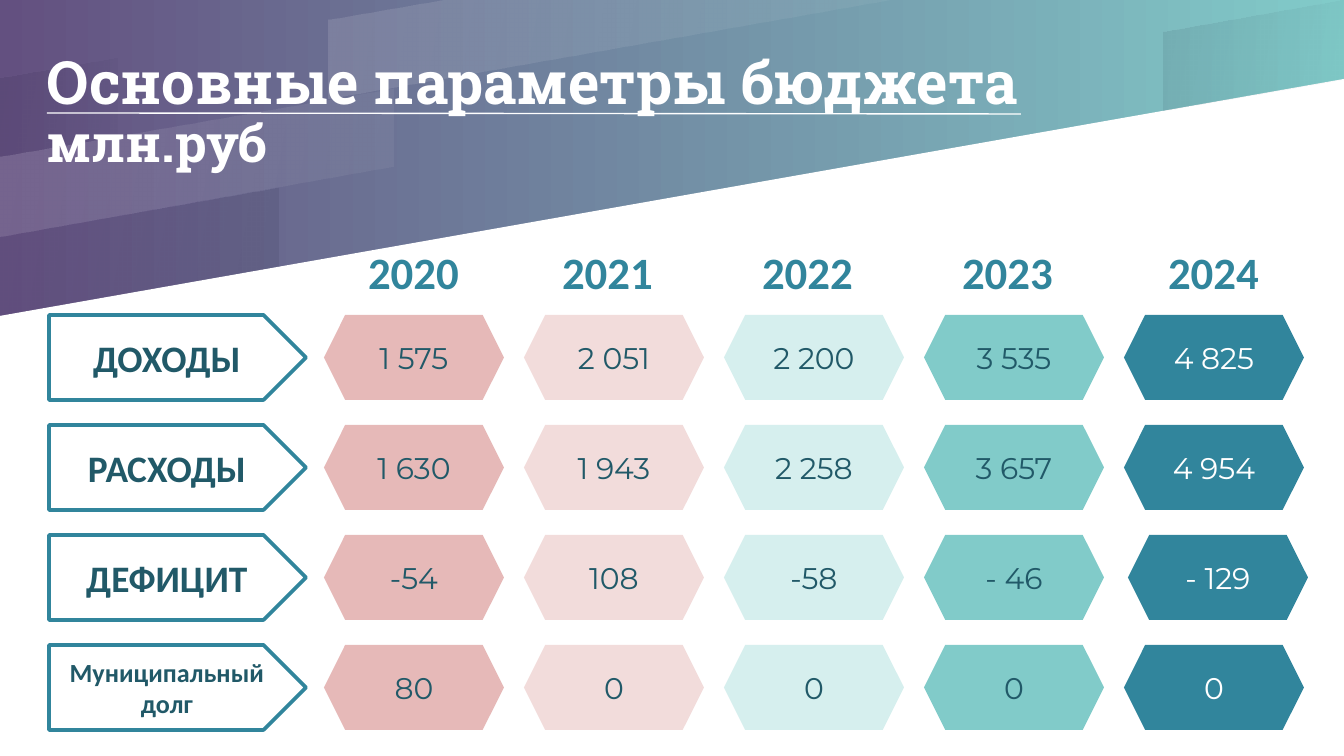
from dataclasses import dataclass

from lxml.etree import SubElement
from pptx import Presentation
from pptx.dml.color import RGBColor
from pptx.enum.shapes import MSO_CONNECTOR, MSO_SHAPE
from pptx.enum.text import MSO_ANCHOR, MSO_AUTO_SIZE, PP_ALIGN
from pptx.oxml.ns import qn
from pptx.util import Emu, Pt

PX = 914400 / 134.4

WHITE = RGBColor(0xFF, 0xFF, 0xFF)
NIGHT = RGBColor(0x00, 0x00, 0x1A)
PURPLE = RGBColor(0x63, 0x50, 0x80)
MINT = RGBColor(0x81, 0xCB, 0xC9)
PALE = RGBColor(0xD6, 0xEF, 0xEE)
ROSE = RGBColor(0xE6, 0xB9, 0xB8)
BLUSH = RGBColor(0xF2, 0xDC, 0xDB)
TEAL = RGBColor(0x31, 0x85, 0x9C)
DEEP = RGBColor(0x21, 0x59, 0x68)


@dataclass(frozen=True)
class Style:
    font: str
    size: int
    color: RGBColor
    bold: bool = True


@dataclass(frozen=True)
class Band:
    points: tuple[tuple[int, int], ...]
    color: RGBColor
    start: int
    end: int


@dataclass(frozen=True)
class Year:
    name: str
    left: int
    fill: RGBColor
    ink: RGBColor
    values: tuple[str, ...]


@dataclass(frozen=True)
class Row:
    name: str
    size: int


BANDS = (
    Band(((446, 0), (328, 20), (328, 99), (894, 0)), WHITE, 12, 5),
    Band(((0, 78), (0, 157), (117, 137), (117, 58)), NIGHT, 8, 2),
    Band(((0, 237), (0, 316), (278, 267), (278, 188)), NIGHT, 2, 8),
    Band(((1344, 0), (1164, 32), (1164, 110), (1344, 79)), NIGHT, 8, 2),
    Band(((0, 157), (0, 237), (394, 167), (394, 89)), WHITE, 12, 5),
)
PAPER = ((0, 756), (1344, 756), (1344, 79), (0, 316))
YEARS = (
    Year("2020", 349, ROSE, DEEP, ("1 575", "1 630", "-54", "80")),
    Year("2021", 543, BLUSH, DEEP, ("2 051", "1 943", "108", "0")),
    Year("2022", 743, PALE, DEEP, ("2 200", "2 258", "-58", "0")),
    Year("2023", 943, MINT, DEEP, ("3 535", "3 657", "- 46", "0")),
    Year("2024", 1149, TEAL, WHITE, ("4 825", "4 954", "- 129", "0")),
)
ROWS = (Row("ДОХОДЫ", 20), Row("РАСХОДЫ", 20), Row("ДЕФИЦИТ", 20),
        Row("Муниципальный долг", 14))
TOP, STEP, HIGH = 315, 110, 85
LEFT, PITCH, WIDE = 324, 200, 180
NUDGE = {("2024", "ДЕФИЦИТ"): 4}


def px(*sizes: int) -> list[Emu]:
    return [Emu(round(size * PX)) for size in sizes]


def add_run(para, text: str, style: Style):
    run = para.add_run()
    run.text = text
    font = run.font
    font.name, font.size, font.bold = style.font, Pt(style.size), style.bold
    font.color.rgb = style.color
    return run


def center(shape, text: str, style: Style) -> None:
    frame = shape.text_frame
    frame.word_wrap = True
    para = frame.paragraphs[0]
    para.alignment = PP_ALIGN.CENTER
    add_run(para, text, style)


def add_free(slide, points):
    pen = slide.shapes.build_freeform(*points[0], scale=PX)
    pen.add_line_segments(points[1:], close=True)
    shape = pen.convert_to_shape()
    shape.shadow.inherit = False
    shape.line.fill.background()
    return shape


def add_band(slide, band: Band) -> None:
    fill = add_free(slide, band.points).fill
    fill.gradient()
    fill.gradient_angle = 350
    for stop in fill.gradient_stops:
        stop.color.rgb = band.color
    colors = fill._xPr.iter(qn("a:srgbClr"))
    for color, alpha in zip(colors, (band.start, band.end)):
        SubElement(color, qn("a:alpha"), val=str(alpha * 1000))


def add_back(slide) -> None:
    fill = slide.background.fill
    fill.gradient()
    fill.gradient_angle = 0
    for stop, color in zip(fill.gradient_stops, (PURPLE, MINT)):
        stop.color.rgb = color
    paper = add_free(slide, PAPER)
    paper.fill.solid()
    paper.fill.fore_color.rgb = WHITE
    for band in BANDS:
        add_band(slide, band)


def cast(run) -> None:
    """Give the letters of a run a soft shadow."""
    effects = SubElement(run.font._element, qn("a:effectLst"))
    run.font._element.find(qn("a:solidFill")).addnext(effects)
    shadow = SubElement(effects, qn("a:outerShdw"), blurRad="38100",
                        dist="38100", dir="2700000", algn="tl")
    color = SubElement(shadow, qn("a:srgbClr"), val="000000")
    SubElement(color, qn("a:alpha"), val="43000")


def add_title(slide) -> None:
    title = slide.shapes.title
    title.left, title.top, title.width, title.height = px(47, 9, 1113, 208)
    frame = title.text_frame
    frame.auto_size = MSO_AUTO_SIZE.NONE
    frame.word_wrap = True
    frame.vertical_anchor = MSO_ANCHOR.MIDDLE
    frame.margin_left = frame.margin_right = 0
    frame.margin_top = frame.margin_bottom = 0
    para = frame.paragraphs[0]
    para.alignment = PP_ALIGN.LEFT
    para.line_spacing = 0.9
    for text, size in (("Основные параметры бюджета ", 32), ("млн.руб", 28)):
        cast(add_run(para, text, Style("Roboto Slab", size, WHITE)))
    rule = slide.shapes.add_connector(MSO_CONNECTOR.STRAIGHT,
                                      *px(47, 113, 1021, 114))
    rule.line.color.rgb = WHITE
    rule.line.width = Pt(0.75)
    SubElement(rule._element.spPr, qn("a:effectLst"))


def add_label(slide, row: Row, top: int) -> None:
    plate = slide.shapes.add_shape(MSO_SHAPE.PENTAGON, *px(49, top, 257, HIGH))
    plate.shadow.inherit = False
    plate.fill.background()
    plate.line.color.rgb = TEAL
    plate.line.width = Pt(2)
    center(plate, row.name, Style("Calibri", row.size, DEEP))


def add_year(slide, year: Year, left: int) -> None:
    head = slide.shapes.add_textbox(*px(year.left, 238, 129, 67))
    center(head, year.name, Style("Calibri", 24, TEAL))
    for index, (row, value) in enumerate(zip(ROWS, year.values)):
        shift = NUDGE.get((year.name, row.name), 0)
        cell = slide.shapes.add_shape(
            MSO_SHAPE.HEXAGON,
            *px(left + shift, TOP + index * STEP, WIDE, HIGH))
        cell.shadow.inherit = False
        cell.fill.solid()
        cell.fill.fore_color.rgb = year.fill
        cell.line.fill.background()
        center(cell, value, Style("Montserrat", 16, year.ink, False))


def main() -> None:
    deck = Presentation()
    deck.slide_width, deck.slide_height = px(1344, 756)
    slide = deck.slides.add_slide(deck.slide_layouts[5])
    add_back(slide)
    add_title(slide)
    for index, row in enumerate(ROWS):
        add_label(slide, row, TOP + index * STEP)
    for index, year in enumerate(YEARS):
        add_year(slide, year, LEFT + index * PITCH)
    # The title placeholder comes first in the layout; lift it over the bands.
    slide.shapes._spTree.append(slide.shapes.title._element)
    deck.save("out.pptx")


if __name__ == "__main__":
    main()
